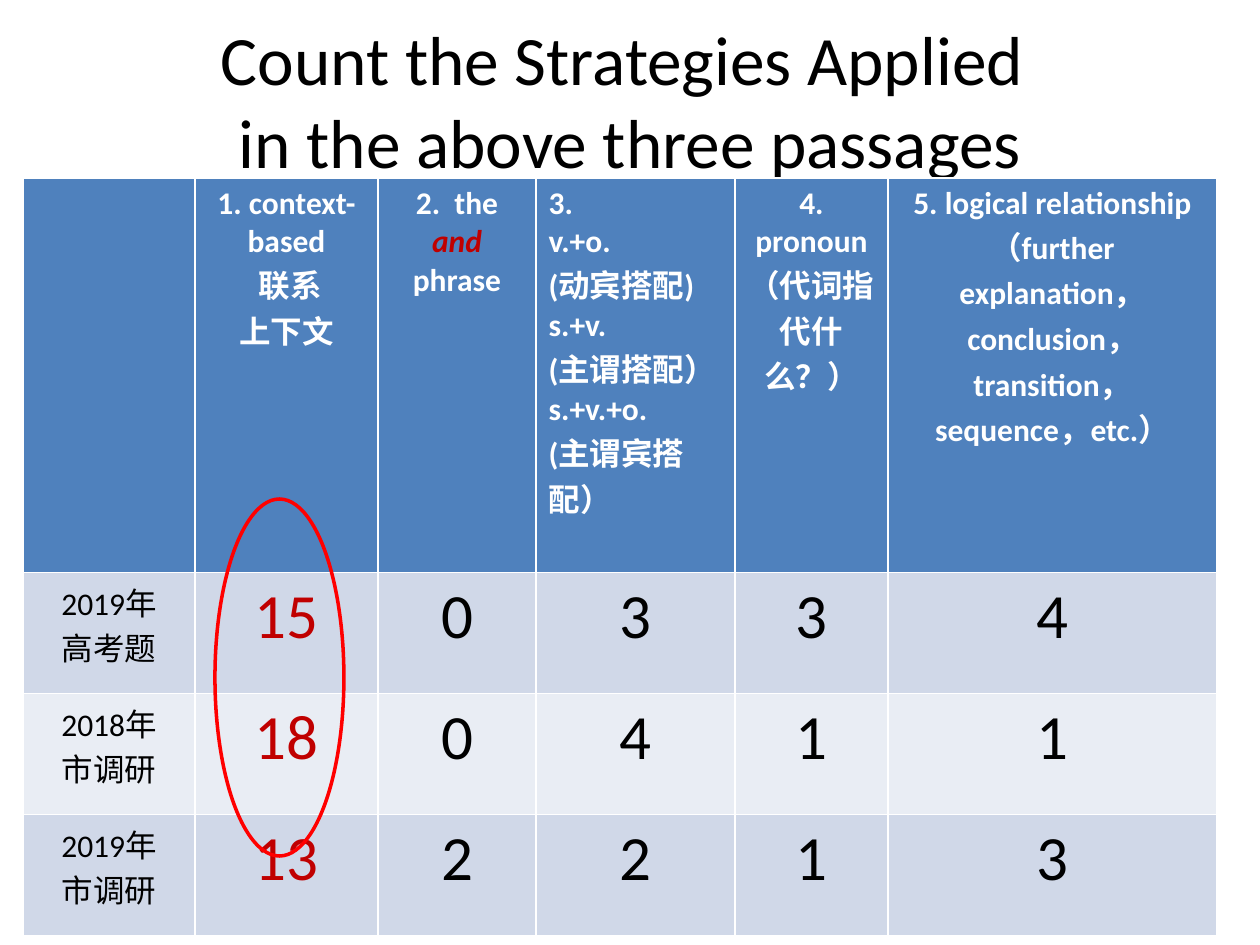
from pptx import Presentation
from pptx import util as u
from pptx.dml.color import RGBColor
from pptx.enum import shapes, text

PX = u.Inches(1) / 126
THEME = {
    "font": "Calibri",
    "black": RGBColor(0x00, 0x00, 0x00),
    "white": RGBColor(0xFF, 0xFF, 0xFF),
    "accent": RGBColor(0xC0, 0x00, 0x00),
    "ring": RGBColor(0xFF, 0x00, 0x00),
    "header": RGBColor(0x4F, 0x81, 0xBD),
    "bands": [RGBColor(0xD0, 0xD8, 0xE8), RGBColor(0xE9, 0xED, 0xF4)],
    "title": 39.6,
    "label": 18,
    "count": 36,
}


def px(*lengths):
    return [u.Emu(round(length * PX)) for length in lengths]


def write(frame, lines, size, color, bold=False, align=text.PP_ALIGN.CENTER):
    for index, line in enumerate(lines):
        paragraph = frame.add_paragraph() if index else frame.paragraphs[0]
        paragraph.alignment = align
        paragraph.text = line
        for run in paragraph.runs:
            style = {"name": THEME["font"], "size": u.Pt(size), "bold": bold}
            for name, value in style.items():
                setattr(run.font, name, value)
            run.font.color.rgb = color


presentation = Presentation()
presentation.slide_width, presentation.slide_height = px(1260, 945)
slide = presentation.slides.add_slide(presentation.slide_layouts[5])

title = slide.shapes.title
title.left, title.top, title.width, title.height = px(63, 20, 1134, 158)
title.text_frame.vertical_anchor = text.MSO_ANCHOR.MIDDLE
write(title.text_frame, ["Count the Strategies Applied \vin the above three passages"],
      THEME["title"], THEME["black"])

headings = [
    [],
    ["1. context-based", " 联系", "上下文"],
    ["2.  the "],
    ["3.", "v.+o.", "(动宾搭配)", "s.+v.", "(主谓搭配）", "s.+v.+o.", "(主谓宾搭配）"],
    ["4. pronoun （代词指代什么？）"],
    ["5. logical relationship（further explanation，conclusion，transition，sequence，etc.）"],
]
results = [
    (["2019年", "高考题"], [15, 0, 3, 3, 4]),
    (["2018年", "市调研"], [18, 0, 4, 1, 1]),
    (["2019年", "市调研"], [13, 2, 2, 1, 3]),
]
column_widths = px(172, 183, 158, 199, 153, 329)
row_heights = px(315, 121, 121, 121)

table = slide.shapes.add_table(len(row_heights), len(column_widths),
                               *px(23, 178, 1194, 678)).table
for column, width in zip(table.columns, column_widths):
    column.width = width
for row, height in zip(table.rows, row_heights):
    row.height = height

for column, lines in enumerate(headings):
    cell = table.cell(0, column)
    cell.fill.solid()
    cell.fill.fore_color.rgb = THEME["header"]
    align = text.PP_ALIGN.LEFT if column == 3 else text.PP_ALIGN.CENTER
    write(cell.text_frame, lines, THEME["label"], THEME["white"], True, align)

phrase = table.cell(0, 2).text_frame.paragraphs[0]
for wording, color, italic in [("and ", "accent", True), ("phrase", "white", False)]:
    run = phrase.add_run()
    run.text = wording
    style = {"name": THEME["font"], "size": u.Pt(THEME["label"]), "bold": True, "italic": italic}
    for name, value in style.items():
        setattr(run.font, name, value)
    run.font.color.rgb = THEME[color]

for row, (label, counts) in enumerate(results, start=1):
    for cell in table.rows[row].cells:
        cell.fill.solid()
        cell.fill.fore_color.rgb = THEME["bands"][(row - 1) % 2]
    write(table.cell(row, 0).text_frame, label, THEME["label"], THEME["black"])
    for column, count in enumerate(counts, start=1):
        color = THEME["accent"] if column == 1 else THEME["black"]
        write(table.cell(row, column).text_frame, [str(count)], THEME["count"], color)

ring = slide.shapes.add_shape(shapes.MSO_SHAPE.OVAL, *px(215, 499, 129, 357))
ring.shadow.inherit = False
ring.fill.background()
ring.line.color.rgb = THEME["ring"]
ring.line.width = u.Pt(2)

presentation.save("out.pptx")
